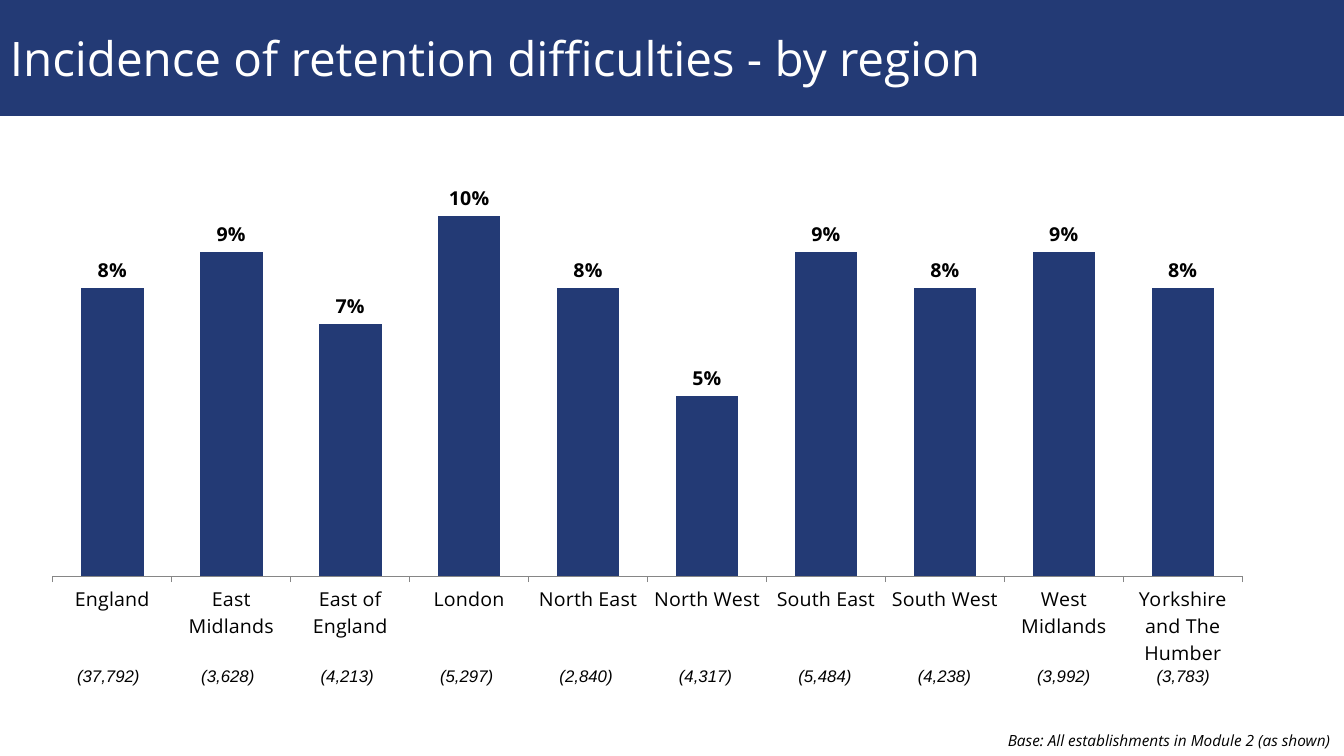
import dataclasses

import lxml.etree
import pptx
import pptx.chart.data
import pptx.dml.color
import pptx.enum.chart
import pptx.enum.shapes
import pptx.enum.text
import pptx.oxml
import pptx.util

Inches = pptx.util.Inches
Pt = pptx.util.Pt
Align = pptx.enum.text.PP_ALIGN
Anchor = pptx.enum.text.MSO_ANCHOR

COLOR = {"navy": "233A75", "white": "FFFFFF", "black": "000000", "gray": "868686"}
SANS = "Open Sans"


@dataclasses.dataclass
class Region:
    name: str
    share: float
    base: str


REGIONS = [
    Region("England", 0.08, "37,792"),
    Region("East Midlands", 0.09, "3,628"),
    Region("East of England", 0.07, "4,213"),
    Region("London", 0.10, "5,297"),
    Region("North East", 0.08, "2,840"),
    Region("North West", 0.05, "4,317"),
    Region("South East", 0.09, "5,484"),
    Region("South West", 0.08, "4,238"),
    Region("West Midlands", 0.09, "3,992"),
    Region("Yorkshire and The Humber", 0.08, "3,783"),
]


def rgb(name: str) -> pptx.dml.color.RGBColor:
    return pptx.dml.color.RGBColor.from_string(COLOR[name])


def style(font, size: float, color: str, face: str = SANS,
          bold: bool = False, italic: bool = False) -> None:
    font.name, font.size = face, Pt(size)
    font.bold, font.italic = bold, italic
    font.color.rgb = rgb(color)


def add_note(slide, text: str, left: float, top: float, width: float, height: float,
             size: float, face: str, align, side: float = 0.1, edge: float = 0.05) -> None:
    box = slide.shapes.add_textbox(Inches(left), Inches(top), Inches(width), Inches(height))
    frame = box.text_frame
    frame.word_wrap = True
    frame.margin_left = frame.margin_right = Inches(side)
    frame.margin_top = frame.margin_bottom = Inches(edge)
    para = frame.paragraphs[0]
    para.text, para.alignment = text, align
    style(para.font, size, "black", face, italic=True)


def add_title(slide, text: str) -> None:
    band = slide.shapes.add_shape(pptx.enum.shapes.MSO_SHAPE.RECTANGLE,
                                  0, 0, Inches(13.33), Inches(1.15))
    band.shadow.inherit = False
    band.fill.solid()
    band.fill.fore_color.rgb = rgb("navy")
    band.line.fill.background()
    band.text_frame.vertical_anchor = Anchor.MIDDLE
    para = band.text_frame.paragraphs[0]
    para.text, para.alignment = text, Align.LEFT
    style(para.font, 34, "white")


def set_plot(chart, x: float, y: float, w: float, h: float) -> None:
    """Fix the inner plot area as fractions of the chart."""
    area = chart.plots[0]._element.getparent()
    for old in area.findall(pptx.oxml.ns.qn("c:layout")):
        area.remove(old)
    layout = lxml.etree.Element(pptx.oxml.ns.qn("c:layout"))
    manual = lxml.etree.SubElement(layout, pptx.oxml.ns.qn("c:manualLayout"))
    parts = {"layoutTarget": "inner", "xMode": "edge", "yMode": "edge",
             "x": x, "y": y, "w": w, "h": h}
    for tag, val in parts.items():
        lxml.etree.SubElement(manual, pptx.oxml.ns.qn(f"c:{tag}")).set("val", str(val))
    area.insert(0, layout)


def add_bars(slide) -> None:
    data = pptx.chart.data.CategoryChartData(number_format="0%")
    data.categories = [region.name for region in REGIONS]
    data.add_series("Series 1", [region.share for region in REGIONS])
    chart = slide.shapes.add_chart(
        pptx.enum.chart.XL_CHART_TYPE.COLUMN_CLUSTERED,
        Inches(0.5), Inches(1.35), Inches(12.34), Inches(5.26), data).chart
    chart.has_legend = chart.has_title = False
    style(chart.font, 18, "black")

    # Axes
    values = chart.value_axis
    values.minimum_scale, values.maximum_scale = 0, 0.12
    values.has_major_gridlines = False
    values.visible = False
    names = chart.category_axis
    names.major_tick_mark = pptx.enum.chart.XL_TICK_MARK.OUTSIDE
    names.format.line.color.rgb = rgb("gray")
    names.format.line.width = Pt(0.75)
    style(names.tick_labels.font, 14, "black")

    # Bars and their labels
    plot = chart.plots[0]
    plot.gap_width = 90
    plot.vary_by_categories = False
    fill = plot.series[0].format.fill
    fill.solid()
    fill.fore_color.rgb = rgb("navy")
    plot.has_data_labels = True
    labels = plot.data_labels
    labels.show_value = True
    labels.number_format, labels.number_format_is_linked = "0%", False
    labels.position = pptx.enum.chart.XL_LABEL_POSITION.OUTSIDE_END
    style(labels.font, 14, "black", bold=True)
    set_plot(chart, 0.002, 0.015, 0.956, 0.832)


def main() -> None:
    deck = pptx.Presentation()
    deck.slide_width, deck.slide_height = Inches(13.33), Inches(7.5)
    slide = deck.slides.add_slide(deck.slide_layouts[6])

    add_title(slide, "Incidence of retention difficulties - by region")
    add_bars(slide)

    # Base sizes under the regions
    step = (11.29 - 0.63) / (len(REGIONS) - 1)
    for i, region in enumerate(REGIONS):
        add_note(slide, f"({region.base})", 0.63 + i * step, 6.56, 0.89, 0.3,
                 12, "Arial", Align.CENTER)

    # Footnote
    add_note(slide, "Base: All establishments in Module 2 (as shown)",
             3.16, 7.18, 10.17, 0.32, 11, SANS, Align.RIGHT, 0.13, 0.07)
    deck.save("out.pptx")


if __name__ == "__main__":
    main()
